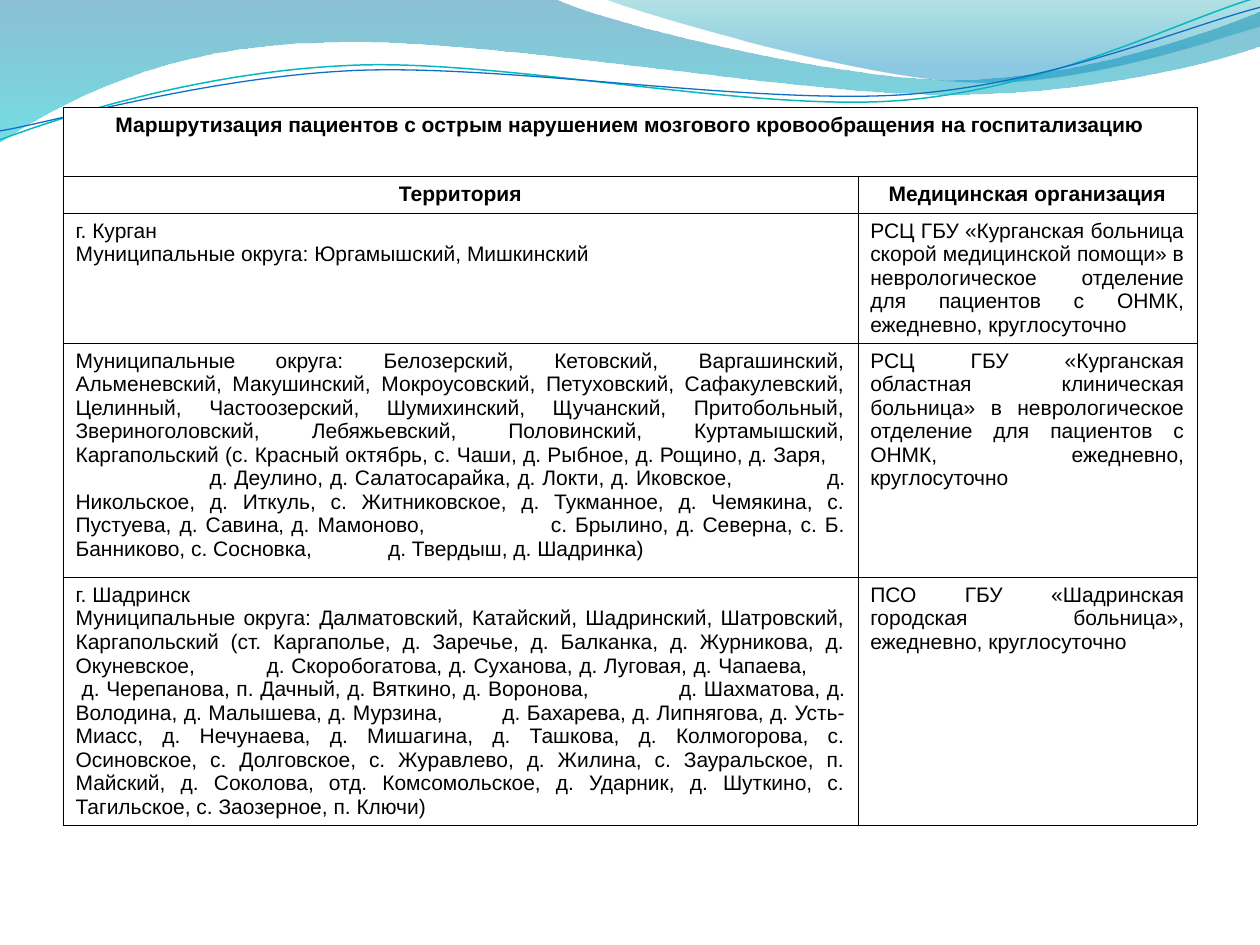
import copy

import lxml.etree
import pptx
import pptx.dml.color
import pptx.enum.text
import pptx.oxml.ns
import pptx.util

Cm = pptx.util.Cm
Pt = pptx.util.Pt
qn = pptx.oxml.ns.qn
ALIGN = pptx.enum.text.PP_ALIGN

BLACK, WHITE = "000000", "FFFFFF"

# Waves in cm: a start point, then segments (2 numbers: line, 6: Bézier curve)
FILLED_WAVES = [
    dict(start=(0, 0), angle=90,
         segments=[(11.18, -0.03),
                   (12.09, 0.43, 16.87, 1.6, 19.25, 1.6),
                   (21.67, 1.6, 24.33, 0.66, 25.4, 0.23),
                   (25.43, 0.91),
                   (24.97, 1.12, 22.1, 1.93, 18.95, 1.9),
                   (15.8, 1.9, 9.7, 0.71, 6.53, 0.86),
                   (3.28, 0.89, 1.17, 2.11, -0.03, 2.87)],
         stops=[(0, "0074A0", 45), (1, "00C4CD", 55)]),
    dict(start=(12.17, -0.03), angle=270,
         segments=[(12.93, 0.28, 17.32, 1.57, 19.53, 1.65),
                   (21.74, 1.75, 24.41, 0.81, 25.4, 0.53),
                   (25.4, 0)],
         stops=[(0.2, "008ABF", 45), (1, "00A0A8", 30)]),
]
LINE_WAVES = [
    dict(start=(0, 2.82), line_color="09B7BF", width=0.85,
         segments=[(1.22, 2.36, 4.01, 1.45, 7.04, 1.32),
                   (10.03, 1.17, 15.06, 2.26, 18.11, 2.03),
                   (21.16, 1.8, 23.83, 0.38, 25.35, -0.05)]),
    dict(start=(0, 2.64), line_color="0F6FC6", width=0.75,
         segments=[(1.19, 2.44, 4.17, 1.55, 7.19, 1.42),
                   (10.24, 1.3, 15.16, 2.11, 18.21, 1.91),
                   (21.23, 1.7, 23.9, 0.53, 25.4, 0.15)]),
]

COLUMN_WIDTHS = [16.02, 6.84]
ROW_HEIGHTS = [1.4, 0.72, 2.62, 4.72, 4.98]
HEADING = "Маршрутизация пациентов с острым нарушением мозгового кровообращения на госпитализацию"
COLUMN_TITLES = ["Территория", "Медицинская организация"]

# Each row: territory paragraphs, tab stops in cm, medical organisation
# A tab before a line break keeps that line from being stretched
ROUTES = [
    (["г. Курган", "Муниципальные округа: Юргамышский, Мишкинский"], [],
     "РСЦ ГБУ «Курганская больница скорой медицинской помощи» в неврологическое отделение "
     "для пациентов с ОНМК, ежедневно, круглосуточно"),
    (["Муниципальные округа: Белозерский, Кетовский, Варгашинский, Альменевский, Макушинский, "
      "Мокроусовский, Петуховский, Сафакулевский, Целинный, Частоозерский, Шумихинский, "
      "Щучанский, Притобольный, Звериноголовский, Лебяжьевский, Половинский, Куртамышский, "
      "Каргапольский (с. Красный октябрь, с. Чаши, д. Рыбное, д. Рощино, д. Заря,\t\v"
      "\tд. Деулино, д. Салатосарайка, д. Локти, д. Иковское,\tд. Никольское, д. Иткуль, "
      "с. Житниковское, д. Тукманное, д. Чемякина, с. Пустуева, д. Савина‚ д. Мамоново,"
      "\tс. Брылино, д. Северна, с. Б. Банниково, с. Сосновка,\tд. Твердыш, д. Шадринка)"],
     [2.7, 6.3, 9.4, 15, 15.4],
     "РСЦ ГБУ «Курганская областная клиническая больница» в неврологическое отделение "
     "для пациентов с ОНМК, ежедневно, круглосуточно"),
    (["г. Шадринск",
      "Муниципальные округа: Далматовский, Катайский, Шадринский, Шатровский, Каргапольский "
      "(ст. Каргаполье, д. Заречье, д. Балканка, д. Журникова, д. Окуневское,"
      "\tд. Скоробогатова, д. Суханова, д. Луговая, д. Чапаева,\t\v\tд. Черепанова, п. Дачный, "
      "д. Вяткино, д. Воронова,\tд. Шахматова, д. Володина, д. Малышева, д. Мурзина,"
      "\tд. Бахарева, д. Липнягова, д. Усть-Миасс, д. Нечунаева, д. Мишагина, д. Ташкова, "
      "д. Колмогорова, с. Осиновское, с. Долговское, с. Журавлево, д. Жилина, с. Зауральское, "
      "п. Майский, д. Соколова, отд. Комсомольское, д. Ударник, д. Шуткино, с. Тагильское, "
      "с. Заозерное, п. Ключи)"],
     [0.12, 3.85, 8.55, 12.05, 15.4],
     "ПСО ГБУ «Шадринская городская больница», ежедневно, круглосуточно"),
]


def rgb(color):
    return pptx.dml.color.RGBColor.from_string(color)


def set_attributes(target, values):
    for name, value in values.items():
        setattr(target, name, value)


def add_outline(slide, start, segments, close):
    """Draw straight segments, then bend those that have control points."""
    builder = slide.shapes.build_freeform(Cm(start[0]), Cm(start[1]))
    builder.add_line_segments([(Cm(s[-2]), Cm(s[-1])) for s in segments], close=close)
    shape = builder.convert_to_shape()
    shape.shadow.inherit = False
    straight_parts = list(shape._element.iter(qn("a:lnTo")))
    for part, segment in zip(straight_parts, segments):
        if len(segment) == 6:
            curve = lxml.etree.Element(qn("a:cubicBezTo"))
            for x, y in zip(segment[::2], segment[1::2]):
                lxml.etree.SubElement(curve, qn("a:pt"), x=str(Cm(x) - shape.left),
                                      y=str(Cm(y) - shape.top))
            part.getparent().replace(part, curve)
    return shape


def add_filled_wave(slide, start, segments, angle, stops):
    shape = add_outline(slide, start, segments, close=True)
    shape.line.fill.background()
    shape.fill.gradient()
    shape.fill.gradient_angle = 360 - angle
    for stop, (position, color, opacity) in zip(shape.fill.gradient_stops, stops):
        stop.position = position
        stop.color.rgb = rgb(color)
    # Opacity of each gradient stop
    colors = shape.fill._xPr.iter(qn("a:srgbClr"))
    for element, (position, color, opacity) in zip(colors, stops):
        lxml.etree.SubElement(element, qn("a:alpha"), val=str(opacity * 1000))


def add_line_wave(slide, start, segments, line_color, width):
    shape = add_outline(slide, start, segments, close=False)
    shape.fill.background()
    shape.line.color.rgb = rgb(line_color)
    shape.line.width = Pt(width)


def set_borders(cell):
    properties = cell._tc.get_or_add_tcPr()
    for index, side in enumerate(("lnL", "lnR", "lnT", "lnB")):
        line = lxml.etree.Element(qn(f"a:{side}"), w=str(Pt(0.06)))
        fill = lxml.etree.SubElement(line, qn("a:solidFill"))
        lxml.etree.SubElement(fill, qn("a:srgbClr"), val=BLACK)
        properties.insert(index, line)


def write_cell(cell, texts, alignment=ALIGN.JUSTIFY, bold=False, tab_stops=()):
    frame = cell.text_frame
    for index, text in enumerate(texts):
        paragraph = frame.add_paragraph() if index else frame.paragraphs[0]
        paragraph.text = text
        paragraph.alignment = alignment
        if "\t" in text:
            tabs = lxml.etree.SubElement(paragraph._p.get_or_add_pPr(), qn("a:tabLst"))
            for stop in tab_stops:
                lxml.etree.SubElement(tabs, qn("a:tab"), pos=str(Cm(stop)), algn="l")
        for run in paragraph.runs:
            set_attributes(run.font, dict(name="Arial", size=Pt(12), bold=bold))
            run.font.color.rgb = rgb(BLACK)
        # Line breaks take the format of the text
        for line_break in paragraph._p.findall(qn("a:br")):
            line_break.append(copy.deepcopy(paragraph.runs[0]._r.rPr))


def add_routing_table(slide):
    frame = slide.shapes.add_table(
        len(ROW_HEIGHTS), len(COLUMN_WIDTHS), Cm(1.27), Cm(2.16),
        Cm(sum(COLUMN_WIDTHS)), Cm(sum(ROW_HEIGHTS)))
    table = frame.table
    set_attributes(table, dict(first_row=False, horz_banding=False))
    for column, width in zip(table.columns, COLUMN_WIDTHS):
        column.width = Cm(width)
    for row, height in zip(table.rows, ROW_HEIGHTS):
        row.height = Cm(height)
    for cell in table.iter_cells():
        cell.fill.solid()
        cell.fill.fore_color.rgb = rgb(WHITE)
        set_borders(cell)

    # Heading rows
    table.cell(0, 0).merge(table.cell(0, 1))
    write_cell(table.cell(0, 0), [HEADING], ALIGN.CENTER, bold=True)
    for column, title in enumerate(COLUMN_TITLES):
        write_cell(table.cell(1, column), [title], ALIGN.CENTER, bold=True)

    # Territories and the organisations that serve them
    for row, (territory, tab_stops, organisation) in enumerate(ROUTES, start=2):
        write_cell(table.cell(row, 0), territory, tab_stops=tab_stops)
        write_cell(table.cell(row, 1), [organisation])


def main():
    presentation = pptx.Presentation()
    set_attributes(presentation, dict(slide_width=Cm(25.4), slide_height=Cm(19.05)))
    slide = presentation.slides.add_slide(presentation.slide_layouts[6])
    for wave in FILLED_WAVES:
        add_filled_wave(slide, **wave)
    for wave in LINE_WAVES:
        add_line_wave(slide, **wave)
    add_routing_table(slide)
    presentation.save("out.pptx")


if __name__ == "__main__":
    main()
